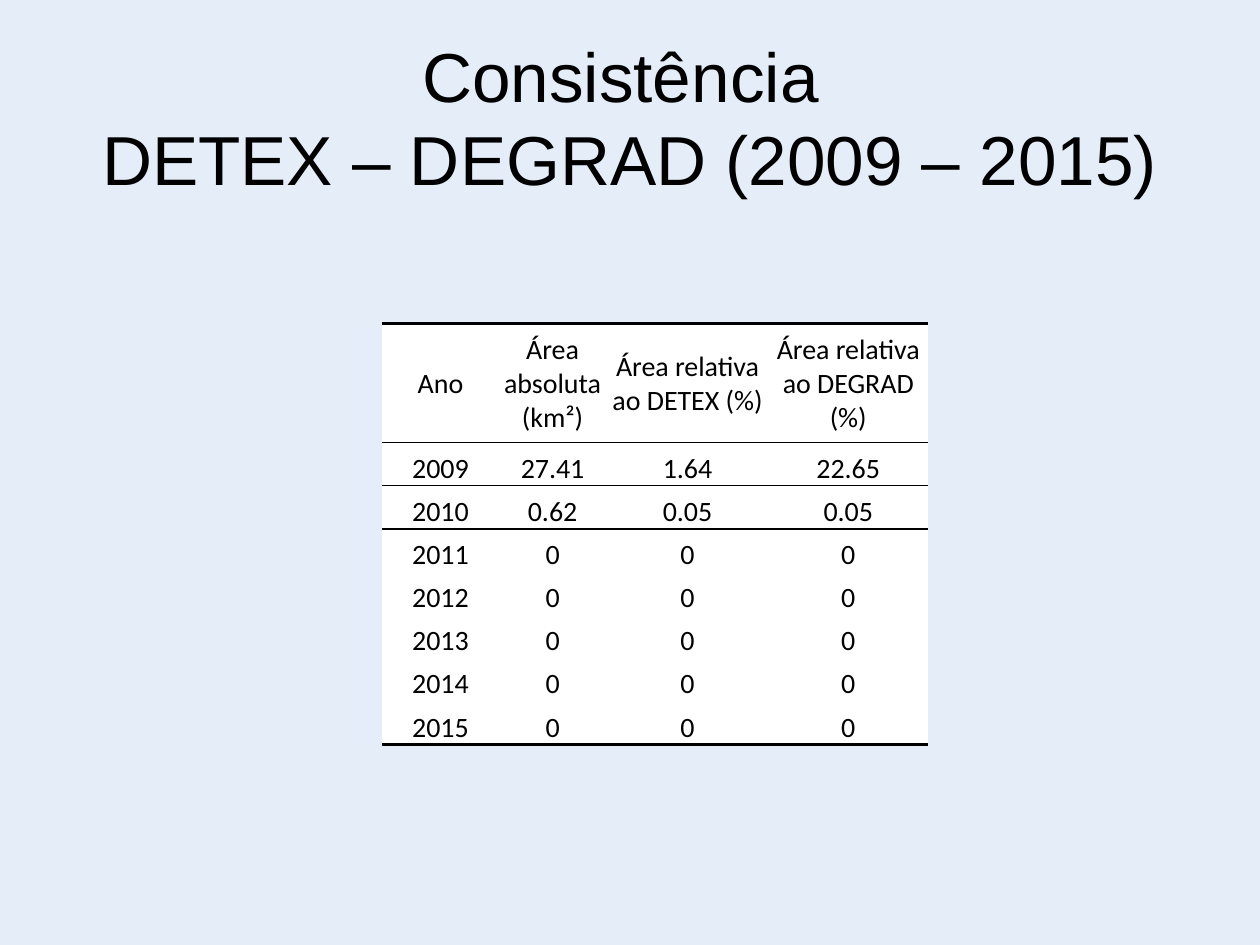
from dataclasses import dataclass

from lxml import etree
from pptx import Presentation
from pptx.dml.color import RGBColor
from pptx.enum.text import MSO_ANCHOR, MSO_AUTO_SIZE, PP_ALIGN
from pptx.oxml.ns import qn
from pptx.util import Cm, Pt

CENTER = PP_ALIGN.CENTER
MIDDLE, BOTTOM = MSO_ANCHOR.MIDDLE, MSO_ANCHOR.BOTTOM
NO_AUTOFIT = MSO_AUTO_SIZE.NONE
TITLE_ONLY = 5
PLAIN_TABLE_STYLE = "{2D5ABB26-0587-4C30-8999-92F81FD0307C}"


@dataclass(frozen=True)
class Theme:
    background: str = "E4EDF8"
    ink: str = "000000"
    cell: str = "FFFFFF"
    title_font: str = "Arial"
    table_font: str = "Calibri"
    title_size: float = 39.6
    table_size: float = 16
    thick: float = 2
    thin: float = 1


THEME = Theme()

HEADERS = ["Ano", "Área absoluta (km²)", "Área relativa ao DETEX (%)",
           "Área relativa ao DEGRAD (%)"]
MEASURED = [["2009", "27.41", "1.64", "22.65"],
            ["2010", "0.62", "0.05", "0.05"]]
EMPTY_YEARS = [[str(year), "0", "0", "0"] for year in range(2011, 2016)]
COLUMN_WIDTHS = [2.36, 2.16, 3.28, 3.2]
HEADER_HEIGHT, YEAR_HEIGHT = 2.39, 0.87


def format_text(frame, font, size):
    for paragraph in frame.paragraphs:
        paragraph.alignment = CENTER
        for run in paragraph.runs:
            run.font.name = font
            run.font.size = Pt(size)
            run.font.color.rgb = RGBColor.from_string(THEME.ink)


def add_title(slide, text):
    title = slide.shapes.title
    title.left, title.top = Cm(1.27), Cm(0.76)
    title.width, title.height = Cm(22.86), Cm(3.18)
    title.text_frame.text = text
    title.text_frame.auto_size = NO_AUTOFIT
    title.text_frame.vertical_anchor = MIDDLE
    format_text(title.text_frame, THEME.title_font, THEME.title_size)


def add_border(cell, side, width):
    border = etree.SubElement(cell._tc.get_or_add_tcPr(), qn(f"a:{side}"), w=str(Pt(width)))
    fill = etree.SubElement(border, qn("a:solidFill"))
    etree.SubElement(fill, qn("a:srgbClr"), val=THEME.ink)


def fill_cell(cell, text, anchor, top_rule, bottom_rule):
    cell.text_frame.text = text
    cell.vertical_anchor = anchor
    cell.margin_left = cell.margin_right = cell.margin_top = Cm(0.03)
    cell.margin_bottom = 0
    format_text(cell.text_frame, THEME.table_font, THEME.table_size)
    # Borders come before the fill in the cell properties
    for side, width in (("lnT", top_rule), ("lnB", bottom_rule)):
        if width:
            add_border(cell, side, width)
    cell.fill.solid()
    cell.fill.fore_color.rgb = RGBColor.from_string(THEME.cell)


def add_area_table(slide, records):
    heights = [HEADER_HEIGHT] + [YEAR_HEIGHT] * (len(records) - 1)
    table = slide.shapes.add_table(
        len(records), len(COLUMN_WIDTHS), Cm(7.7), Cm(6.53),
        Cm(sum(COLUMN_WIDTHS)), Cm(sum(heights))).table
    table._tbl.tblPr.find(qn("a:tableStyleId")).text = PLAIN_TABLE_STYLE
    table.horz_banding = False
    for column, width in zip(table.columns, COLUMN_WIDTHS):
        column.width = Cm(width)
    for row, height in zip(table.rows, heights):
        row.height = Cm(height)

    # Horizontal rules, keyed by the number of rows above them
    rules = {0: THEME.thick, 1: THEME.thin, 2: THEME.thin, len(records): THEME.thick}
    for r, record in enumerate(records):
        anchor = BOTTOM if r else MIDDLE
        for c, text in enumerate(record):
            fill_cell(table.cell(r, c), text, anchor, rules.get(r), rules.get(r + 1))


def main():
    prs = Presentation()
    prs.slide_width, prs.slide_height = Cm(25.4), Cm(19.05)
    slide = prs.slides.add_slide(prs.slide_layouts[TITLE_ONLY])
    slide.background.fill.solid()
    slide.background.fill.fore_color.rgb = RGBColor.from_string(THEME.background)

    add_title(slide, "Consistência \vDETEX – DEGRAD (2009 – 2015)")
    add_area_table(slide, [HEADERS] + MEASURED + EMPTY_YEARS)
    prs.save("out.pptx")


if __name__ == "__main__":
    main()
